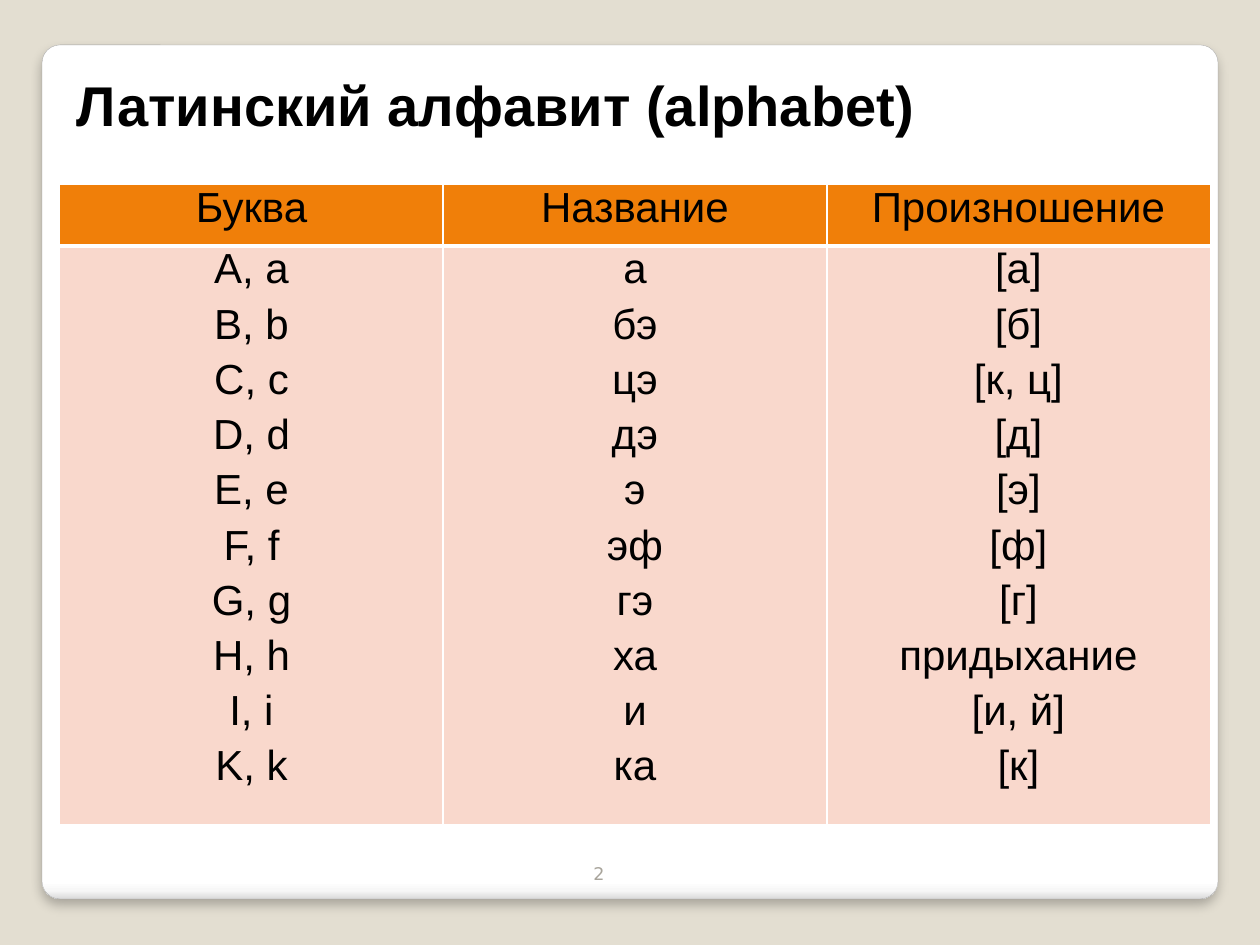
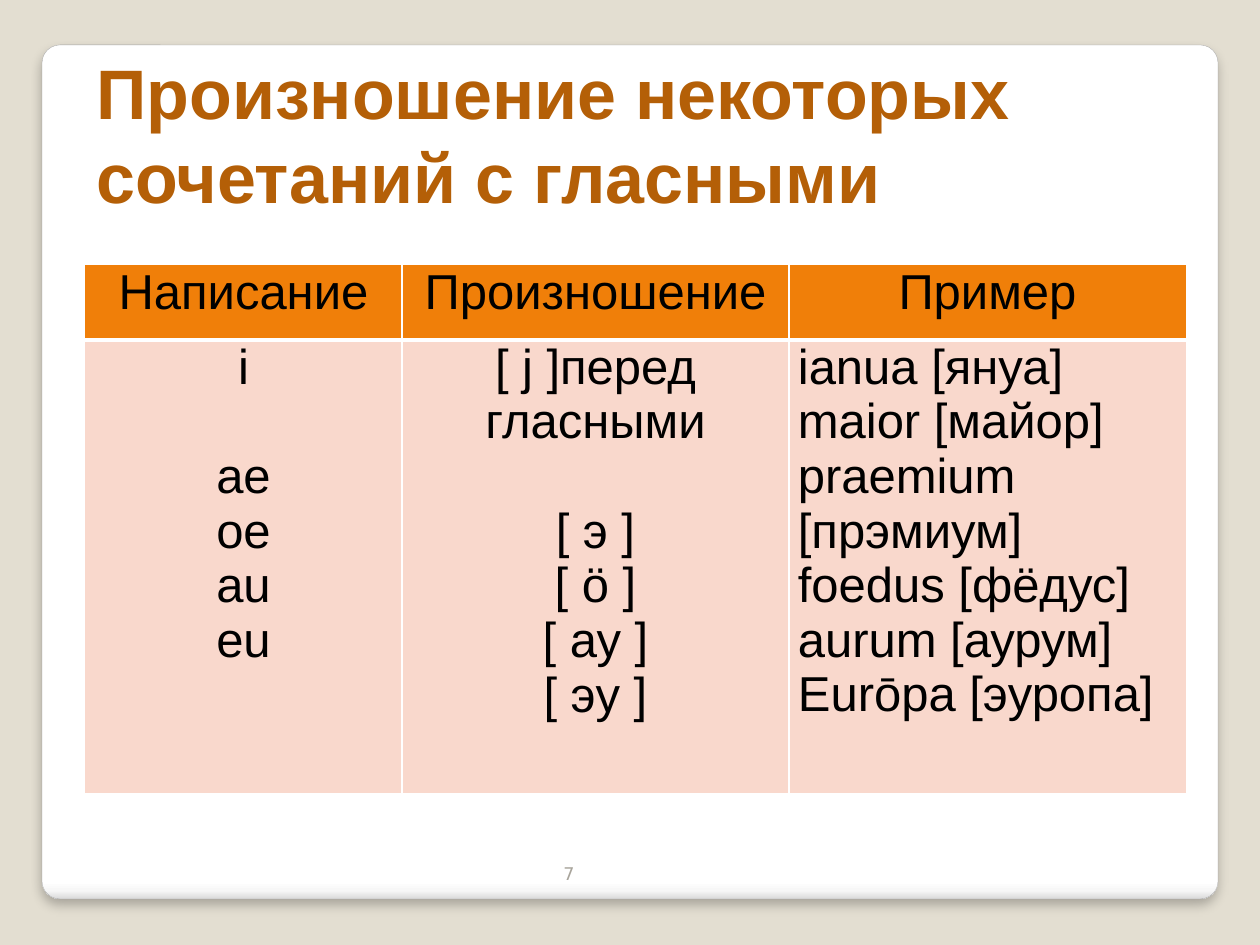
from lxml import etree
from pptx import Presentation
from pptx.dml.color import RGBColor
from pptx.enum.shapes import MSO_SHAPE as Shape
from pptx.enum.text import MSO_ANCHOR as Anchor, PP_ALIGN as Align
from pptx.oxml import parse_xml
from pptx.oxml.ns import nsdecls, qn
from pptx.util import Emu, Pt

# Content: a gap in a column is written as None
GAP = None
LETTERS = [
    ("А, а", "а", "[a]"),
    ("B, b", "бэ", "[б]"),
    ("C, c", "цэ", "[к, ц]"),
    ("D, d", "дэ", "[д]"),
    ("E, e", "э", "[э]"),
    ("F, f", "эф", "[ф]"),
    ("G, g", "гэ", "[г]"),
    ("H, h", "ха", "придыхание"),
    ("I, i", "и", "[и, й]"),
    ("K, k", "ка", "[к]"),
]
VOWEL_PAIRS = [
    ["i", GAP, "ae", "oe", "au", "eu"],
    ["[ j ]перед гласными", GAP, "[ э ]", "[ ö ]", "[ ау ]", "[ эу ]"],
    ["ianua [януа]", "maior [майор]", "praemium [прэмиум]",
     "foedus [фёдус]", "aurum [аурум]", "Eurōpa [эуропа]"],
]

# Boxes are left, top, width, height in px
SLIDES = [
    dict(
        title="Латинский алфавит (alphabet)",
        title_box=(64, 63, 1142, 81), title_size=32, title_color="black",
        headers=["Буква", "Название", "Произношение"],
        columns=list(zip(*LETTERS)), aligns=[Align.CENTER] * 3,
        table_at=(60, 185), widths=[383, 384, 383], heights=[61, 578],
        size=24, spacing=4.8,
        number="2", number_box=(581, 840, 315, 50),
    ),
    dict(
        title="Произношение некоторых сочетаний с гласными",
        title_box=(84, 41, 1153, 183), title_size=40, title_color="brown",
        headers=["Написание", "Произношение", "Пример"],
        columns=VOWEL_PAIRS, aligns=[Align.CENTER, Align.CENTER, Align.LEFT],
        table_at=(85, 265), widths=[317, 387, 397], heights=[75, 453],
        size=28, spacing=0,
        number="7", number_box=(551, 840, 295, 50),
    ),
]

# Shared look
COLORS = {
    "background": "E3DED1", "panel_line": "A4A4A4", "black": "000000",
    "brown": "B45F07", "header": "F07F09", "body": "F9D8CC",
    "white": "FFFFFF", "number": "A8A49B",
}
PANEL_BOX = (42, 45, 1176, 854)
PANEL_STOPS = [(0, "FFFFFF"), (98, "FFFFFF"), (99, "F7F7F7"), (100, "DADADA")]
LINE_RATIO = 1.117  # line height of the table font relative to its size


def px(value):
    return Emu(round(value * 914400 / 126))


def color(name):
    return RGBColor.from_string(COLORS[name])


def write_text(frame, lines, size, ink, font="Arial", bold=False,
               align=Align.LEFT, spacing=0, line_spacing=None):
    frame.word_wrap = True
    paragraph, gap = None, 0
    for line in lines:
        if line is GAP:
            gap += size * LINE_RATIO
            continue
        if paragraph is None:
            paragraph = frame.paragraphs[0]
            before = 0
        else:
            paragraph = frame.add_paragraph()
            before = spacing + gap
        gap = 0
        paragraph.alignment = align
        paragraph.space_before = Pt(before)
        paragraph.line_spacing = line_spacing
        run = paragraph.add_run()
        run.text = line
        run.font.name = font
        run.font.size = Pt(size)
        run.font.bold = bold
        run.font.color.rgb = color(ink)


def add_panel(slide):
    """Draw the rounded white panel behind everything else."""
    panel = slide.shapes.add_shape(Shape.ROUNDED_RECTANGLE, *map(px, PANEL_BOX))
    panel.adjustments[0] = 0.021
    panel.line.color.rgb = color("panel_line")
    panel.line.width = Pt(0.16)
    panel.fill.gradient()
    panel.fill.gradient_angle = 270
    stops = panel.element.spPr.find(".//" + qn("a:gsLst"))
    for stop in list(stops):
        stops.remove(stop)
    for position, value in PANEL_STOPS:
        stop = etree.SubElement(stops, qn("a:gs"), pos=str(position * 1000))
        etree.SubElement(stop, qn("a:srgbClr"), val=value)
    panel.shadow.inherit = False
    panel.element.spPr.find(qn("a:effectLst")).append(parse_xml(
        f'<a:outerShdw {nsdecls("a")} blurRad="{Pt(6)}" dist="{Pt(4)}" '
        'dir="5400000" algn="t" rotWithShape="0">'
        '<a:srgbClr val="000000"><a:alpha val="25000"/></a:srgbClr>'
        '</a:outerShdw>'))
    slide.shapes.element.insert(2, panel.element)


def format_cell(cell, fill, borders):
    """Borders are the widths at left, right, top and bottom; 0 is none."""
    properties = cell._tc.get_or_add_tcPr()
    for side, width in zip("LRTB", borders):
        line = etree.SubElement(properties, qn(f"a:ln{side}"), w=str(Pt(width)))
        if width:
            paint = etree.SubElement(line, qn("a:solidFill"))
            etree.SubElement(paint, qn("a:srgbClr"), val=COLORS["white"])
        else:
            etree.SubElement(line, qn("a:noFill"))
    cell.fill.solid()
    cell.fill.fore_color.rgb = color(fill)
    cell.margin_left = cell.margin_right = px(9)
    cell.margin_top = cell.margin_bottom = 0


def add_table(slide, content):
    widths, heights = content["widths"], content["heights"]
    box = (*content["table_at"], sum(widths), sum(heights))
    table = slide.shapes.add_table(2, len(widths), *map(px, box)).table
    table.first_row = table.horz_banding = False
    for row, height in zip(table.rows, heights):
        row.height = px(height)
    for index, width in enumerate(widths):
        table.columns[index].width = px(width)
        left, right = int(index > 0), int(index < len(widths) - 1)
        header, body = table.cell(0, index), table.cell(1, index)
        format_cell(header, "header", (left, right, 0, 3))
        format_cell(body, "body", (left, right, 3, 0))
        write_text(header.text_frame, [content["headers"][index]],
                   content["size"], "black", align=Align.CENTER)
        write_text(body.text_frame, content["columns"][index],
                   content["size"], "black", align=content["aligns"][index],
                   spacing=content["spacing"])


def fill_slide(slide, content):
    # Background and panel
    slide.background.fill.solid()
    slide.background.fill.fore_color.rgb = color("background")
    add_panel(slide)
    # Title
    title = slide.shapes.title
    title.left, title.top, title.width, title.height = map(px, content["title_box"])
    title.text_frame.vertical_anchor = Anchor.BOTTOM
    size = content["title_size"]
    write_text(title.text_frame, [content["title"]], size,
               content["title_color"], bold=True, line_spacing=Pt(size * 1.2))
    # Table
    add_table(slide, content)
    # Slide number
    number = slide.shapes.add_textbox(*map(px, content["number_box"]))
    number.text_frame.vertical_anchor = Anchor.BOTTOM
    write_text(number.text_frame, [content["number"]], 10, "number",
               font="DejaVu Sans")


def main():
    presentation = Presentation()
    presentation.slide_width, presentation.slide_height = px(1260), px(945)
    title_only = presentation.slide_layouts[5]
    for content in SLIDES:
        fill_slide(presentation.slides.add_slide(title_only), content)
    presentation.save("out.pptx")


if __name__ == "__main__":
    main()
